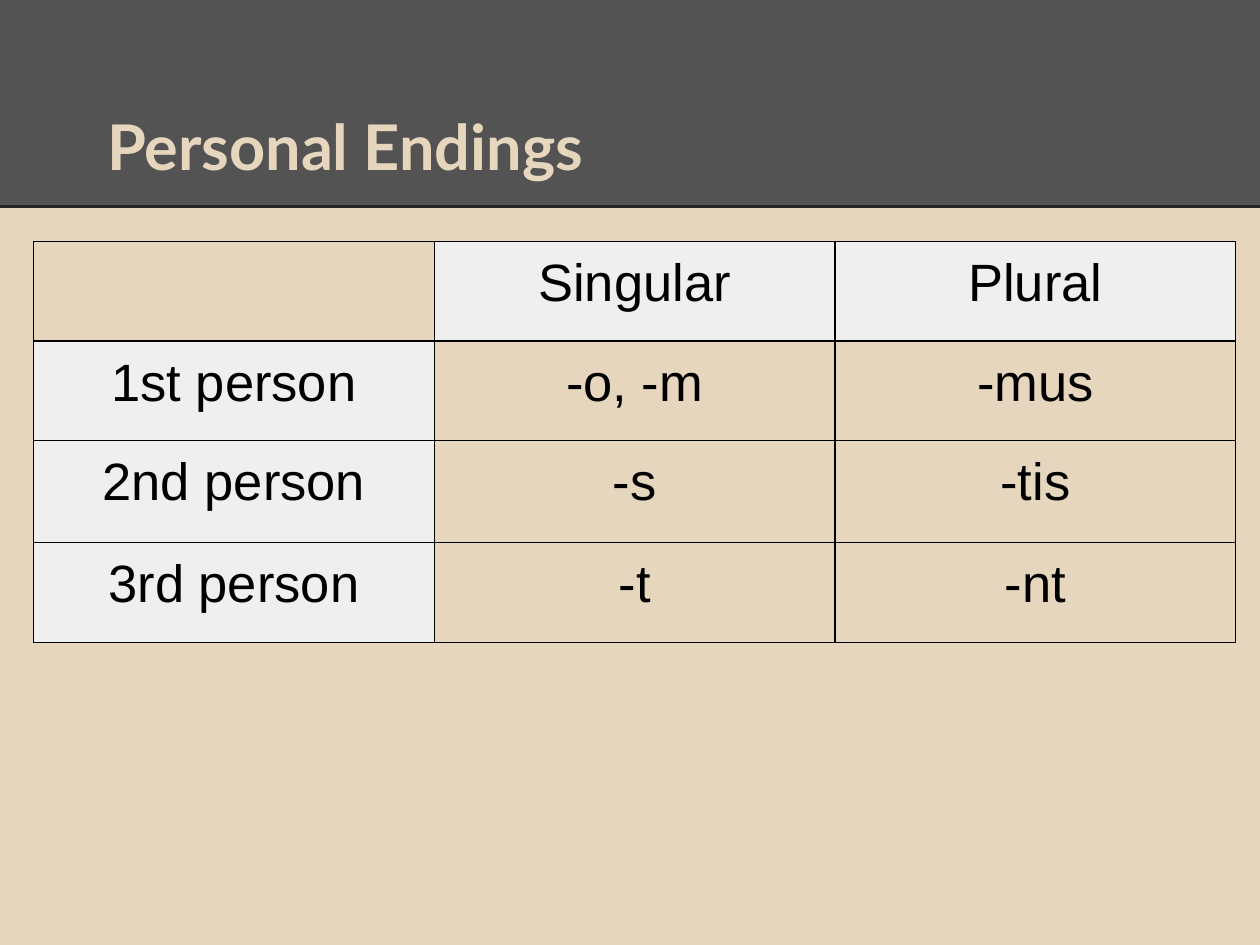
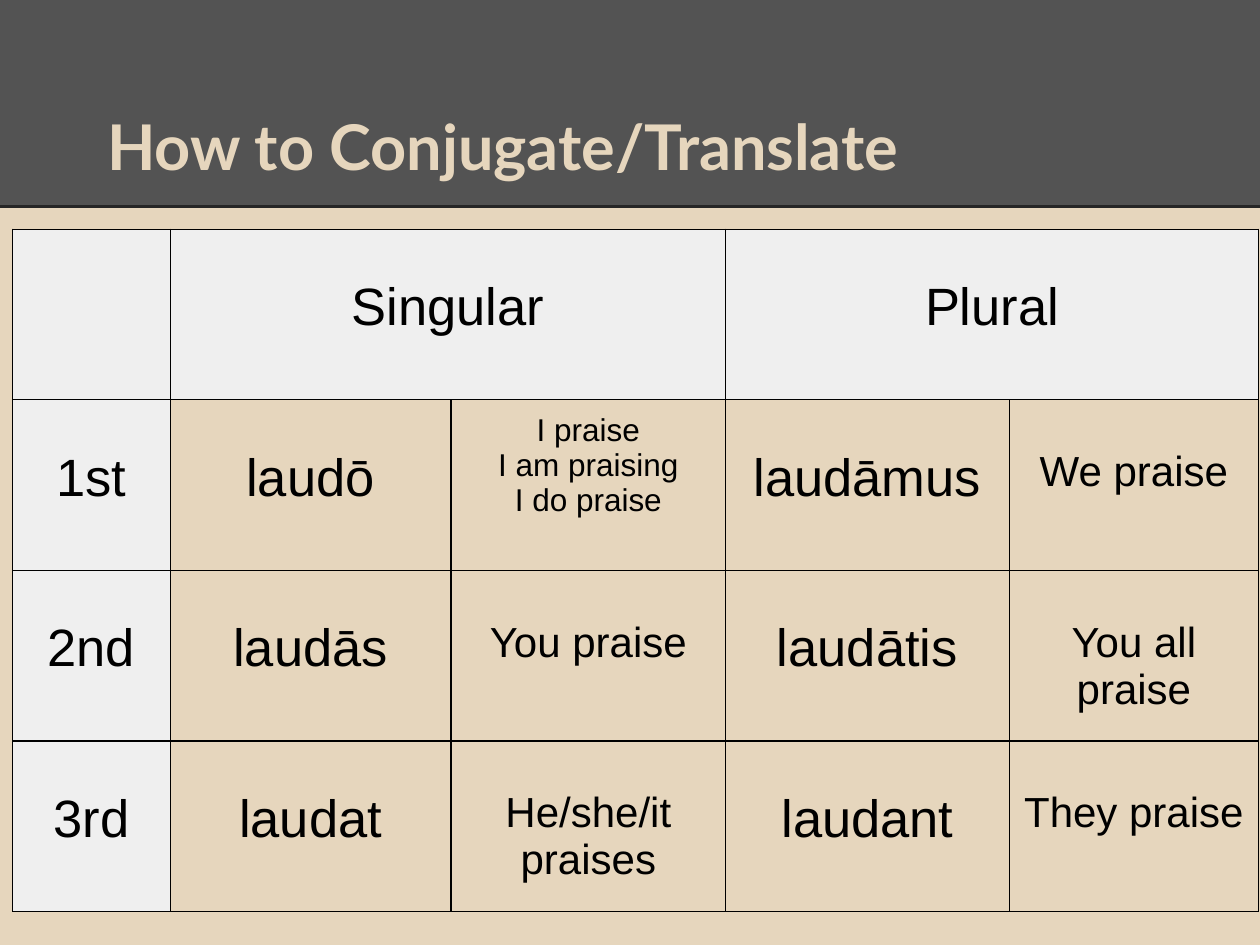
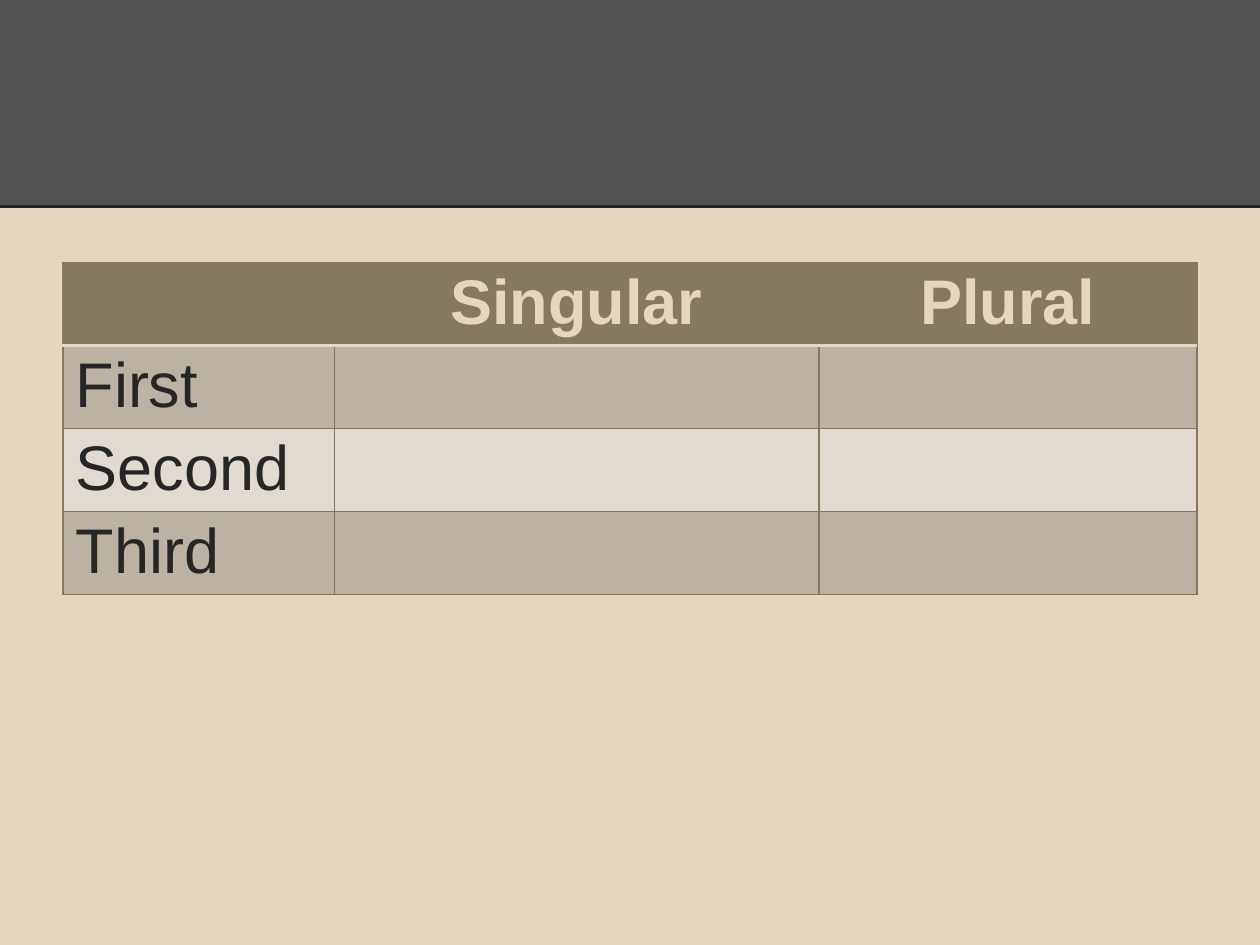
from dataclasses import dataclass

from lxml import etree
from pptx import Presentation
from pptx import util as u
from pptx.dml import color
from pptx.enum import shapes, text
from pptx.oxml import ns


@dataclass(frozen=True)
class Theme:
    sand: str = "E6D6BD"
    band: str = "535353"
    ink: str = "262626"
    black: str = "000000"
    label: str = "EFEFEF"
    olive: str = "867961"
    olive_line: str = "84775E"
    stripe_dark: str = "BCB2A3"
    stripe_light: str = "E2DAD1"
    title_font: str = "Lato"
    body_font: str = "Arial"
    large: int = 36
    medium: int = 30
    small: int = 24
    note: int = 18


THEME = Theme()
SLIDE_WIDTH, SLIDE_HEIGHT = 720, 540
BAND_HEIGHT = 118
INSET = 7.2

ENDINGS = {
    "title": "Personal Endings",
    "position": (19.2, 138),
    "columns": [229] * 3,
    "rows": [56.9, 56.9, 58.3, 56.9],
    "cells": [
        ["", "Singular", "Plural"],
        ["1st person", "-o, -m", "-mus"],
        ["2nd person", "-s", "-tis"],
        ["3rd person", "-t", "-nt"],
    ],
}
CONJUGATION = {
    "title": "How to Conjugate/Translate",
    "position": (7.2, 131),
    "columns": [90, 160.5, 157, 162, 142.5],
    "rows": [97.5] * 4,
    "merges": [(1, 2), (3, 4)],
    "cells": [
        ["", "Singular", "", "Plural", ""],
        ["1st", "laudō", "I praise\nI am praising\nI do praise", "laudāmus", "We praise"],
        ["2nd", "laudās", "You praise", "laudātis", "You all praise"],
        ["3rd", "laudat", "He/she/it praises", "laudant", "They praise"],
    ],
}
PRACTICE = {
    "title": None,
    "position": (36, 149.8),
    "columns": [155, 277, 216],
    "rows": [47.5] * 4,
    "cells": [
        ["", "Singular", "Plural"],
        ["First", "", ""],
        ["Second", "", ""],
        ["Third", "", ""],
    ],
}


def rgb(value):
    return color.RGBColor.from_string(value)


def endings_style(row, column, content):
    is_label = (row == 0) != (column == 0)
    return {"fill": THEME.label if is_label else None, "size": THEME.medium}


def conjugation_style(row, column, content):
    is_label = row == 0 or column == 0
    is_list = "\n" in content
    is_translation = not is_label and column % 2 == 0
    size = THEME.note if is_list else THEME.small if is_translation else THEME.medium
    return {
        "fill": THEME.label if is_label else None,
        "size": size,
        "top": INSET if is_list else 28,
    }


def practice_style(row, column, content):
    style = {"size": THEME.large, "top": 3, "bottom": 3, "line": THEME.olive_line}
    divider = (THEME.sand, 2)
    if row == 0:
        return style | {"fill": THEME.olive, "color": THEME.sand, "bold": True,
                        "borders": {"B": divider}}
    return style | {
        "fill": THEME.stripe_dark if row % 2 else THEME.stripe_light,
        "color": THEME.ink,
        "align": text.PP_ALIGN.LEFT,
        "borders": {"T": divider} if row == 1 else {},
    }


def add_run(paragraph, content, font, size, ink, bold=False):
    run = paragraph.add_run()
    run.text = content
    run.font.name = font
    run.font.size = u.Pt(size)
    run.font.bold = bold
    run.font.color.rgb = rgb(ink)


def set_borders(cell, line, overrides):
    properties = cell._tc.get_or_add_tcPr()
    for index, side in enumerate("LRTB"):
        ink, width = overrides.get(side, (line, 0.75))
        border = etree.Element(ns.qn(f"a:ln{side}"), w=str(u.Pt(width)))
        solid = etree.SubElement(border, ns.qn("a:solidFill"))
        etree.SubElement(solid, ns.qn("a:srgbClr"), val=ink)
        properties.insert(index, border)


def format_cell(cell, content, style):
    cell.margin_left = cell.margin_right = u.Pt(INSET)
    cell.margin_top = u.Pt(style.get("top", INSET))
    cell.margin_bottom = u.Pt(style.get("bottom", INSET))
    if style["fill"]:
        cell.fill.solid()
        cell.fill.fore_color.rgb = rgb(style["fill"])
    else:
        cell.fill.background()
    set_borders(cell, style.get("line", THEME.black), style.get("borders", {}))
    if not content:
        return
    frame = cell.text_frame
    for index, line in enumerate(content.split("\n")):
        paragraph = frame.add_paragraph() if index else frame.paragraphs[0]
        paragraph.alignment = style.get("align", text.PP_ALIGN.CENTER)
        add_run(paragraph, line, THEME.body_font, style["size"],
                style.get("color", THEME.black), style.get("bold", False))


def add_grid(slide, content, style_rule):
    columns, rows = content["columns"], content["rows"]
    left, top = content["position"]
    table = slide.shapes.add_table(
        len(rows), len(columns), u.Pt(left), u.Pt(top),
        u.Pt(sum(columns)), u.Pt(sum(rows))).table
    table.first_row = table.horz_banding = False
    for column, width in zip(table.columns, columns):
        column.width = u.Pt(width)
    for row, height in zip(table.rows, rows):
        row.height = u.Pt(height)
    for first, last in content.get("merges", []):
        table.cell(0, first).merge(table.cell(0, last))
    for r, line in enumerate(content["cells"]):
        for c, value in enumerate(line):
            format_cell(table.cell(r, c), value, style_rule(r, c, value))


def add_title(slide, content):
    title = slide.shapes.title
    title.left, title.top, title.width, title.height = map(u.Pt, (36, 21.6, 648, 90))
    frame = title.text_frame
    frame.word_wrap = True
    frame.auto_size = text.MSO_AUTO_SIZE.NONE
    frame.vertical_anchor = text.MSO_ANCHOR.BOTTOM
    frame.margin_left = frame.margin_right = u.Pt(INSET)
    frame.margin_top = frame.margin_bottom = u.Pt(INSET)
    paragraph = frame.paragraphs[0]
    paragraph.alignment = text.PP_ALIGN.LEFT
    paragraph._p.get_or_add_pPr().set("indent", str(u.Pt(18)))
    add_run(paragraph, content, THEME.title_font, THEME.large, THEME.sand, True)


def decorate_master(master, slide):
    master.background.fill.solid()
    master.background.fill.fore_color.rgb = rgb(THEME.sand)
    band = slide.shapes.add_shape(
        shapes.MSO_SHAPE.RECTANGLE, 0, 0, u.Pt(SLIDE_WIDTH), u.Pt(BAND_HEIGHT))
    band.shadow.inherit = False
    band.fill.solid()
    band.fill.fore_color.rgb = rgb(THEME.band)
    band.line.fill.background()
    rule = slide.shapes.add_connector(
        shapes.MSO_CONNECTOR.STRAIGHT, 0, u.Pt(BAND_HEIGHT),
        u.Pt(SLIDE_WIDTH), u.Pt(BAND_HEIGHT))
    rule.line.color.rgb = rgb(THEME.ink)
    rule.line.width = u.Pt(2.25)
    etree.SubElement(rule.element.spPr, ns.qn("a:effectLst"))
    for index, shape in enumerate((band, rule)):
        shape.element.xpath(".//p:cNvPr")[0].set("id", str(100 + index))
        master.shapes.element.insert(2 + index, shape.element)


def main():
    presentation = Presentation()
    presentation.slide_width = u.Pt(SLIDE_WIDTH)
    presentation.slide_height = u.Pt(SLIDE_HEIGHT)
    title_only, blank = presentation.slide_layouts[5], presentation.slide_layouts[6]
    deck = [
        (ENDINGS, endings_style),
        (CONJUGATION, conjugation_style),
        (PRACTICE, practice_style),
    ]
    for content, style_rule in deck:
        slide = presentation.slides.add_slide(title_only if content["title"] else blank)
        if content["title"]:
            add_title(slide, content["title"])
        add_grid(slide, content, style_rule)
    decorate_master(presentation.slide_master, presentation.slides[0])
    presentation.save("out.pptx")


if __name__ == "__main__":
    main()
